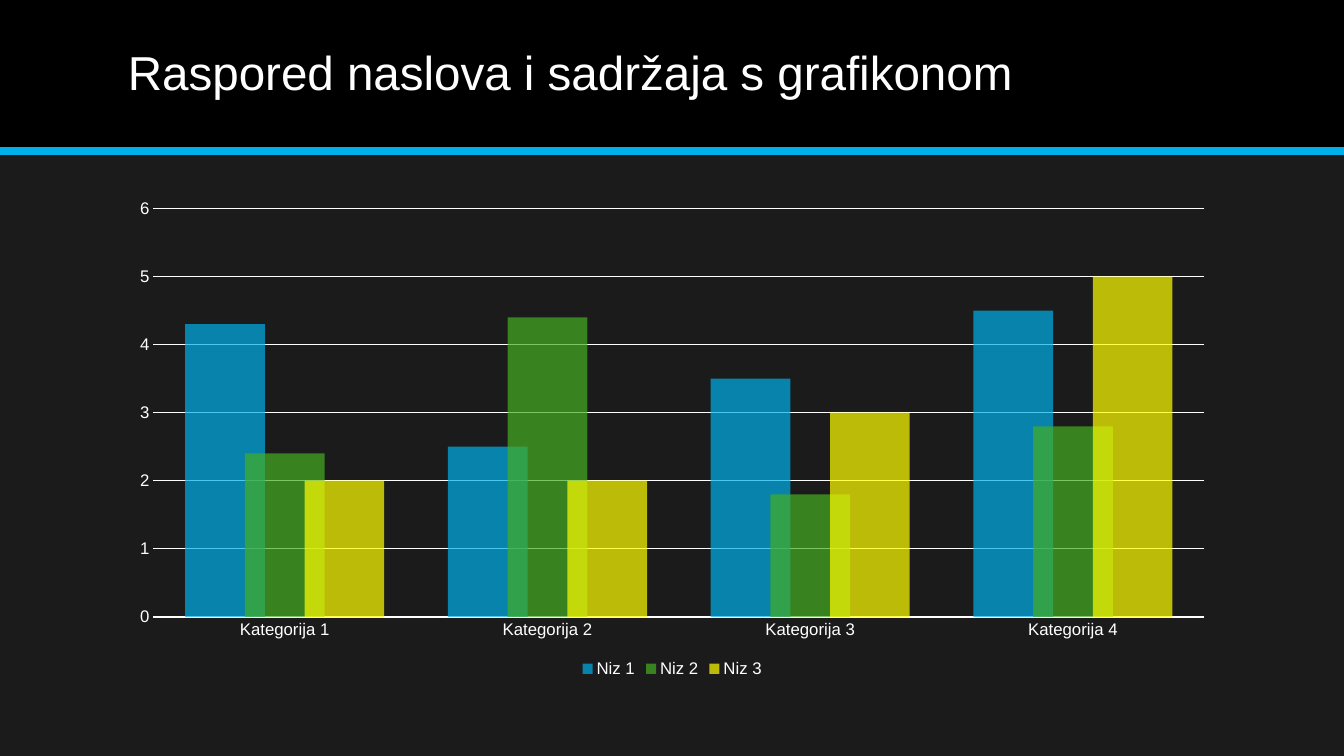
from lxml.etree import SubElement
from pptx import Presentation
from pptx.chart.data import CategoryChartData
from pptx.dml.color import RGBColor
from pptx.enum.chart import XL_CHART_TYPE as ChartType, XL_LEGEND_POSITION as LegendPosition
from pptx.enum.chart import XL_TICK_MARK as TickMark
from pptx.enum.shapes import MSO_CONNECTOR as Connector, MSO_SHAPE as Shape
from pptx.enum.text import MSO_ANCHOR as Anchor, MSO_AUTO_SIZE as AutoSize, PP_ALIGN as Align
from pptx.oxml.ns import qn
from pptx.util import Cm, Pt

FONT = "Arial"
WHITE, BLACK, CHARCOAL = "FFFFFF", "000000", "1B1B1B"
BLUE, GREEN, YELLOW = "00B0EA", "45AE22", "FFFF00"
SLIDE_WIDTH, SLIDE_HEIGHT = Cm(33.87), Cm(19.05)
HEADER_HEIGHT = Cm(3.81)
MARGIN, CONTENT_WIDTH = Cm(2.97), Cm(27.94)
CATEGORIES = ["Kategorija 1", "Kategorija 2", "Kategorija 3", "Kategorija 4"]
SERIES = [
    ("Niz 1", [4.3, 2.5, 3.5, 4.5], BLUE),
    ("Niz 2", [2.4, 4.4, 1.8, 2.8], GREEN),
    ("Niz 3", [2, 2, 3, 5], YELLOW),
]


def paint(color_format, color):
    """Apply a hex colour to a fill, a line fill or a font colour."""
    if hasattr(color_format, "solid"):
        color_format.solid()
        color_format = color_format.fore_color
    color_format.rgb = RGBColor.from_string(color)


def style_font(font, size):
    """Set the deck's white typeface at a size in points."""
    font.name, font.size = FONT, Pt(size)
    paint(font.color, WHITE)


def add_header(slide, left, top, width, height, wording):
    """Place the black band, its blue rule and the title in the given box."""
    band = slide.shapes.add_shape(Shape.RECTANGLE, left, top, width, height)
    band.shadow.inherit = False
    paint(band.fill, BLACK)
    band.line.fill.background()

    bottom = top + height
    rule = slide.shapes.add_connector(Connector.STRAIGHT, left, bottom, left + width, bottom)
    paint(rule.line.fill, BLUE)
    rule.line.width = Pt(6)
    SubElement(rule.element.spPr, qn("a:effectLst"))

    title = slide.shapes.title
    title.element.getparent().append(title.element)
    title.left, title.top = left + MARGIN, top + Cm(0.36)
    title.width, title.height = CONTENT_WIDTH, Cm(3.05)
    frame = title.text_frame
    frame.text = wording
    frame.word_wrap = True
    frame.auto_size = AutoSize.NONE
    frame.vertical_anchor = Anchor.MIDDLE
    heading = frame.paragraphs[0]
    heading.alignment = Align.LEFT
    heading.line_spacing = 0.9
    style_font(heading.font, 34)


def add_column_chart(slide, left, top, width, height):
    """Draw the overlapping translucent columns in the given box."""
    data = CategoryChartData()
    data.categories = CATEGORIES
    for name, values, _ in SERIES:
        data.add_series(name, values)
    chart = slide.shapes.add_chart(
        ChartType.COLUMN_CLUSTERED, left, top, width, height, data).chart
    chart.has_title = False
    style_font(chart.font, 10)

    columns = chart.plots[0]
    columns.gap_width, columns.overlap = 80, 25
    columns.vary_by_categories = False
    for series, (_, _, color) in zip(columns.series, SERIES):
        series.invert_if_negative = False
        fill = series.format.fill
        paint(fill, color)
        solid = series.format.element.spPr if hasattr(series.format, "element") else None
        properties = solid if solid is not None else series._element.spPr
        for color_node in properties.iter(qn("a:srgbClr")):
            SubElement(color_node, qn("a:alpha"), val="70000")

    for axis in (chart.category_axis, chart.value_axis):
        axis.major_tick_mark = axis.minor_tick_mark = TickMark.NONE
        style_font(axis.tick_labels.font, 12)
    baseline = chart.category_axis.format.line
    paint(baseline.fill, WHITE)
    baseline.width = Pt(1.25)

    scale = chart.value_axis
    scale.minimum_scale, scale.maximum_scale, scale.major_unit = 0, 6, 1
    scale.format.line.fill.background()
    scale.has_major_gridlines = True
    gridlines = scale.major_gridlines.format.line
    paint(gridlines.fill, WHITE)
    gridlines.width = Pt(0.75)

    chart.has_legend = True
    chart.legend.position = LegendPosition.BOTTOM
    chart.legend.include_in_layout = False
    style_font(chart.legend.font, 12)


def main():
    """Build the chart slide and save the deck."""
    deck = Presentation()
    deck.slide_width, deck.slide_height = SLIDE_WIDTH, SLIDE_HEIGHT
    slide = deck.slides.add_slide(deck.slide_layouts.get_by_name("Title Only"))
    paint(slide.background.fill, CHARCOAL)
    add_header(slide, 0, 0, SLIDE_WIDTH, HEADER_HEIGHT,
               "Raspored naslova i sadržaja s grafikonom")
    add_column_chart(slide, MARGIN, HEADER_HEIGHT + Cm(0.97), CONTENT_WIDTH, Cm(12.4))
    deck.save("out.pptx")


if __name__ == "__main__":
    main()
